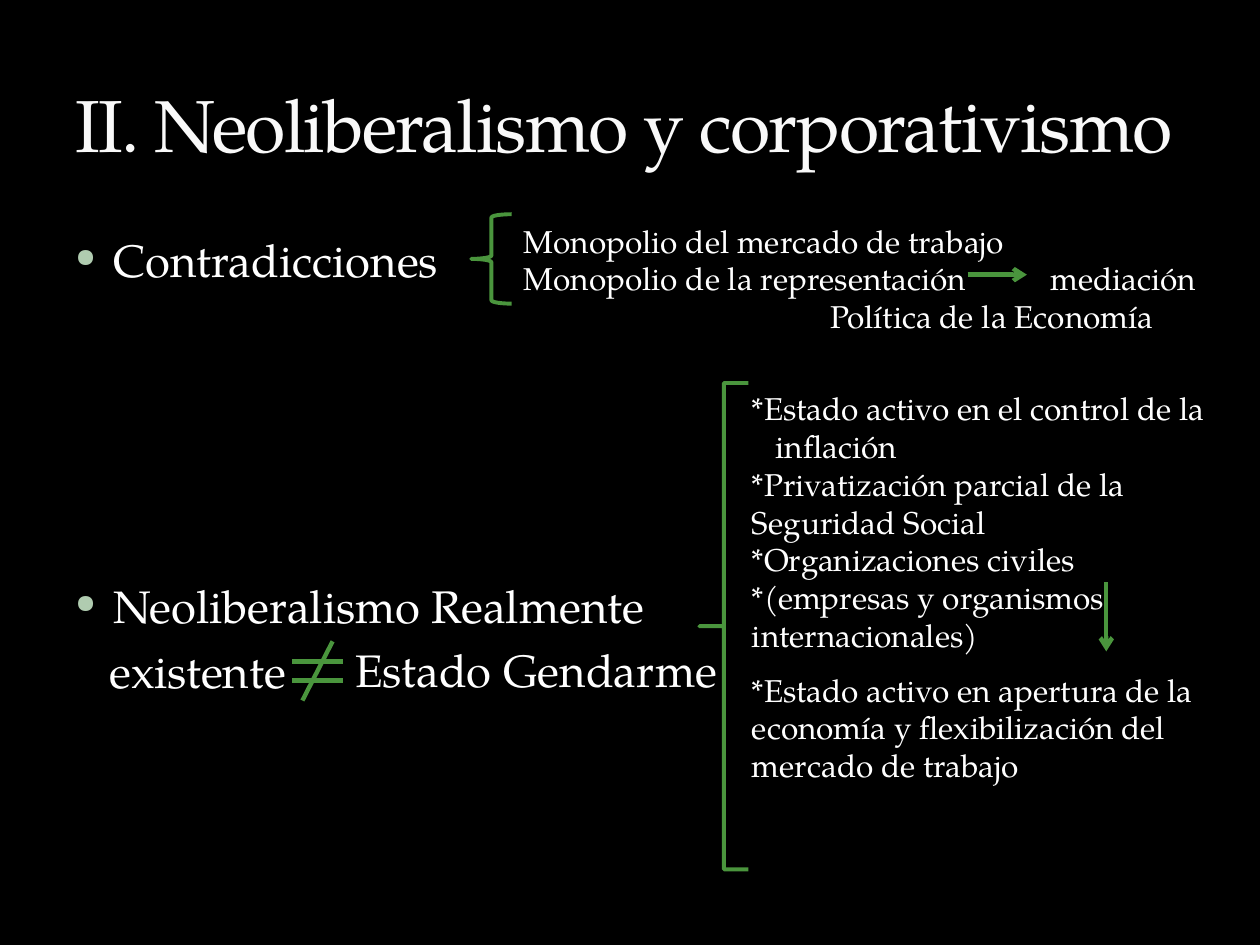
from lxml.etree import SubElement
from pptx import Presentation
from pptx.dml.color import RGBColor
from pptx.enum.shapes import MSO_CONNECTOR as Connector, MSO_SHAPE as Shape
from pptx.enum.text import MSO_ANCHOR as Anchor, PP_ALIGN as Align
from pptx.oxml.ns import qn
from pptx.util import Inches, Pt

CONTRADICTIONS = [
    ("Monopolio del mercado de trabajo", {}),
    ("Monopolio de la representación", {}),
    ("Política de la Economía", {"margin": 2.43}),
]
STATE_ROLES = [
    ("*Estado activo en el control de la inflación", {"margin": 0.19, "indent": -0.19}),
    ("*Privatización parcial de la Seguridad Social", {}),
    ("*Organizaciones civiles *(empresas y organismos internacionales)", {}),
    ("*Estado activo en apertura de la economía y flexibilización del mercado de trabajo",
     {"before": 9.6}),
]
BULLET = {"margin": 0.3, "indent": -0.3, "bullet": "B0CCB0"}
MAIN_POINTS = [
    ("Contradicciones", BULLET),
    ("Neoliberalismo Realmente", {**BULLET, "before": 166.5}),
    ("existente", {"indent": 0.27, "before": 6}),
]


def rgb(value):
    return RGBColor.from_string(value)


def write(paragraph, text, size, color, font, tracking=0, margin=0, indent=0,
          before=0, bullet=None):
    """Fill a paragraph; margin and indent are in inches, the rest in points."""
    run = paragraph.add_run()
    run.text = text
    run.font.size, run.font.name = Pt(size), font
    run.font.color.rgb = rgb(color)
    if tracking:
        run.font._element.set("spc", str(round(tracking * 100)))
    paragraph.alignment = Align.LEFT
    paragraph.space_before = Pt(before)
    properties = paragraph._p.get_or_add_pPr()
    properties.set("marL", str(Inches(margin)))
    properties.set("indent", str(Inches(indent)))
    if bullet:
        tint = SubElement(properties, qn("a:buClr"))
        SubElement(tint, qn("a:srgbClr"), val=bullet)
        SubElement(properties, qn("a:buSzPct"), val="57000")
        SubElement(properties, qn("a:buChar"), char="●")


class Deck:
    """Style and current slide, measured on a grid of 100 columns by 75 rows."""
    font = "TeX Gyre Pagella"
    background, ink, title_ink, accent = "000000", "FFFFFF", "F9F9F9", "4A953D"
    columns, rows = 100, 75

    def __init__(self):
        self.presentation = Presentation()
        self.presentation.slide_width = Inches(10)
        self.presentation.slide_height = Inches(7.5)
        self.slide = self.presentation.slides.add_slide(
            self.presentation.slide_layouts.get_by_name("Title Only"))
        fill = self.slide.background.fill
        fill.solid()
        fill.fore_color.rgb = rgb(self.background)

    def grid(self, column, row):
        return (round(self.presentation.slide_width * column / self.columns),
                round(self.presentation.slide_height * row / self.rows))

    def box(self, column, row, width, height):
        return self.grid(column, row) + self.grid(width, height)

    def title(self, text, *place):
        title = self.slide.shapes.title
        title.left, title.top, title.width, title.height = self.box(*place)
        title.text_frame.vertical_anchor = Anchor.BOTTOM
        write(title.text_frame.paragraphs[0], text, 42, self.title_ink, self.font,
              tracking=-1)

    def text(self, lines, size, *place):
        frame = self.slide.shapes.add_textbox(*self.box(*place)).text_frame
        frame.word_wrap = True
        for number, (line, layout) in enumerate(lines):
            paragraph = frame.add_paragraph() if number else frame.paragraphs[0]
            write(paragraph, line, size, self.ink, self.font, **layout)

    def brace(self, curve, *place):
        brace = self.slide.shapes.add_shape(Shape.LEFT_BRACE, *self.box(*place))
        brace.adjustments[0] = curve
        brace.fill.background()
        brace.line.color.rgb = rgb(self.accent)
        brace.line.width = Pt(2.25)
        brace.shadow.inherit = False

    def line(self, start, end, arrow=False):
        line = self.slide.shapes.add_connector(
            Connector.STRAIGHT, *self.grid(*start), *self.grid(*end))
        line.line.color.rgb = rgb(self.accent)
        line.line.width = Pt(2.5)
        if arrow:
            SubElement(line.line._get_or_add_ln(), qn("a:tailEnd"), type="arrow")
        SubElement(line._element.spPr, qn("a:effectLst"))

    def not_equal(self, column, row):
        """Draw a not-equal sign whose upper bar starts at the given point."""
        for bar in (row, row + 1.5):
            self.line((column, bar), (column + 4, bar))
        self.line((column + 0.8, row + 3.1), (column + 3.2, row - 1.6))


def main():
    deck = Deck()
    deck.title("II. Neoliberalismo y corporativismo", 5, 0.5, 90, 13.3)
    deck.text(MAIN_POINTS, 26, 5, 17.9, 50, 38)
    deck.text([("Estado Gendarme", {})], 26, 27.2, 50.5, 31, 5.4)
    deck.text(CONTRADICTIONS, 18, 40.6, 17.1, 55.9, 10)
    deck.text([("mediación", {})], 18, 82.4, 20.1, 14, 4)
    deck.brace(0.083, 37.4, 17, 3.2, 7.1)
    deck.line((76.8, 21.8), (81.5, 21.8), arrow=True)
    deck.text(STATE_ROLES, 18, 58.7, 30.4, 38.6, 32.4)
    deck.line((87.8, 46.2), (87.8, 51.7), arrow=True)
    deck.brace(0, 55.5, 30.4, 3.9, 38.6)
    deck.not_equal(23.2, 52.5)
    deck.presentation.save("out.pptx")


if __name__ == "__main__":
    main()
